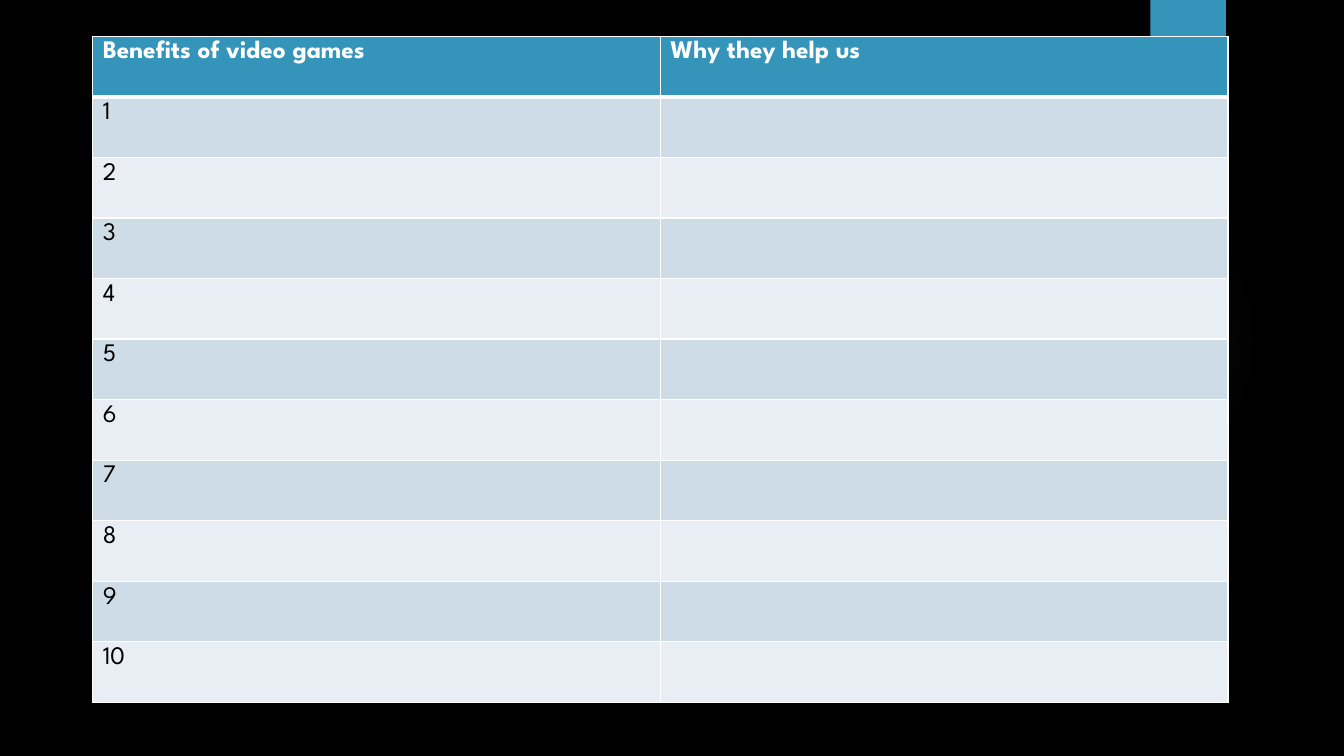
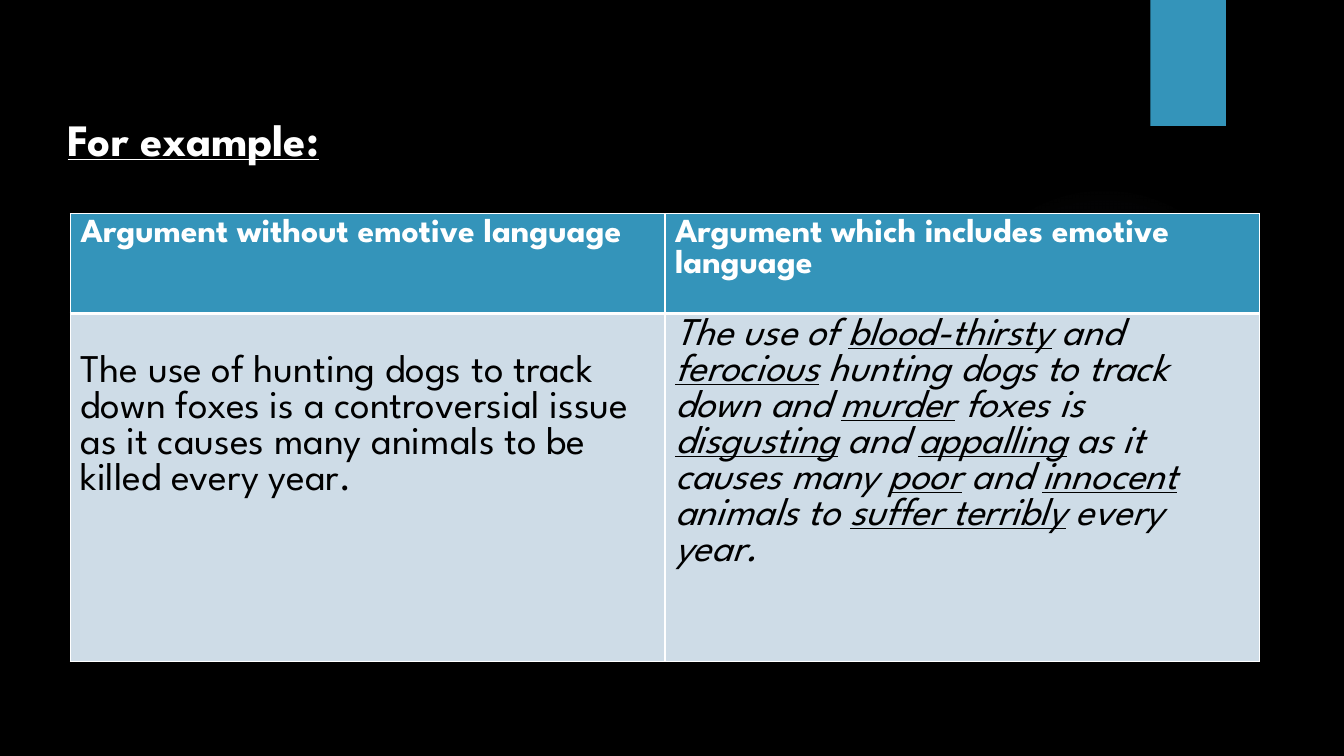
from dataclasses import dataclass

from lxml.etree import SubElement
from pptx import Presentation
from pptx.dml.color import RGBColor
from pptx.enum.shapes import MSO_SHAPE as Shape
from pptx.enum.text import MSO_ANCHOR as Anchor, MSO_AUTO_SIZE as AutoSize, PP_ALIGN as Align
from pptx.oxml import parse_xml
from pptx.oxml.ns import nsdecls, qn
from pptx.presentation import Presentation as Deck
from pptx.slide import Slide
from pptx.table import _Cell as Cell
from pptx.text.text import _Paragraph as Para
from pptx.util import Inches, Pt

BLACK = RGBColor(0x00, 0x00, 0x00)
WHITE = RGBColor(0xFF, 0xFF, 0xFF)
BLUE = RGBColor(0x34, 0x94, 0xBA)
DARK_BAND = RGBColor(0xCE, 0xDC, 0xE7)
LIGHT_BAND = RGBColor(0xE8, 0xEE, 0xF3)
GLOW = RGBColor(0xAA, 0xA7, 0xBC)
GLOW_STOPS = ((0, 7), (36, 6), (69, 0))
FONT = "League Spartan"
THIN, THICK = 1, 3
TITLE_ONLY, BLANK = 5, 6


@dataclass(frozen=True)
class Span:
    text: str
    italic: bool = False
    underline: bool = False


@dataclass(frozen=True)
class Entry:
    spans: tuple[Span, ...] = ()
    top_margin: float = 0.05


@dataclass(frozen=True)
class Grid:
    left: float
    top: float
    width: float
    row_heights: tuple[float, ...]
    header_size: float
    body_size: float
    rows: tuple[tuple[Entry, ...], ...]


def entry(text: str, top_margin: float = 0.05) -> Entry:
    return Entry((Span(text),), top_margin)


def emotive(*pieces: str) -> Entry:
    return Entry(tuple(Span(piece, True, index % 2 == 1) for index, piece in enumerate(pieces)))


BENEFITS = Grid(
    left=0.92, top=0.36, width=11.26, row_heights=(6.61 / 11,) * 11,
    header_size=18, body_size=18,
    rows=(
        (entry("Benefits of video games"), entry("Why they help us")),
        *((entry(str(number)), Entry()) for number in range(1, 11)),
    ),
)

ARGUMENTS = Grid(
    left=0.7, top=2.12, width=11.79, row_heights=(0.99, 3.45),
    header_size=24, body_size=28,
    rows=(
        (entry("Argument without emotive language"),
         entry("Argument which includes emotive language")),
        (entry("The use of hunting dogs to track down foxes is a controversial issue "
               "as it causes many animals to be killed every year.", top_margin=0.41),
         emotive("The use of ", "blood-thirsty", " and ", "ferocious",
                 " hunting dogs to track down and ", "murder", " foxes is ", "disgusting",
                 " and ", "appalling", " as it causes many ", "poor", " and ", "innocent",
                 " animals to ", "suffer terribly", " every year.")),
    ),
)


def add_text(para: Para, text: str, *, size: float, color: RGBColor, bold: bool = False,
             italic: bool = False, underline: bool = False) -> None:
    span = para.add_run()
    span.text = text
    font = span.font
    font.name, font.size = FONT, Pt(size)
    font.bold, font.italic, font.underline = bold, italic, underline
    font.color.rgb = color


def add_backdrop(page: Slide) -> None:
    glow = page.shapes.add_shape(
        Shape.OVAL, Inches(9.41), Inches(1.83), Inches(3.08), Inches(3.08))
    tab = page.shapes.add_shape(
        Shape.RECTANGLE, Inches(11.41), Inches(0), Inches(0.75), Inches(1.25))
    for shape in (glow, tab):
        shape.shadow.inherit = False
        shape.line.fill.background()
    tab.fill.solid()
    tab.fill.fore_color.rgb = BLUE

    stops = "".join(
        f'<a:gs pos="{place * 1000}"><a:srgbClr val="{GLOW}">'
        f'<a:alpha val="{alpha * 1000}"/></a:srgbClr></a:gs>'
        for place, alpha in GLOW_STOPS)
    gradient = parse_xml(
        f'<a:gradFill {nsdecls("a")} rotWithShape="1"><a:gsLst>{stops}</a:gsLst>'
        '<a:path path="circle"><a:fillToRect l="50000" t="50000" r="50000" b="50000"/>'
        '</a:path></a:gradFill>')
    glow.element.spPr.find(qn("a:prstGeom")).addnext(gradient)


def add_page(deck: Deck, layout: int) -> Slide:
    page = deck.slides.add_slide(deck.slide_layouts[layout])
    add_backdrop(page)
    return page


def set_borders(cell: Cell, *, top: float, bottom: float) -> None:
    properties = cell._tc.get_or_add_tcPr()
    for side, width in (("L", THIN), ("R", THIN), ("T", top), ("B", bottom)):
        line = SubElement(properties, qn(f"a:ln{side}"), w=str(Pt(width)))
        fill = SubElement(line, qn("a:solidFill"))
        SubElement(fill, qn("a:srgbClr"), val=str(WHITE))


def add_grid(page: Slide, grid: Grid) -> None:
    columns = len(grid.rows[0])
    table = page.shapes.add_table(
        len(grid.rows), columns, Inches(grid.left), Inches(grid.top),
        Inches(grid.width), Inches(sum(grid.row_heights))).table
    for column in table.columns:
        column.width = Inches(grid.width / columns)
    for row_index, (row, height) in enumerate(zip(grid.rows, grid.row_heights)):
        table.rows[row_index].height = Inches(height)
        header = row_index == 0
        band = BLUE if header else DARK_BAND if row_index % 2 else LIGHT_BAND
        for column_index, content in enumerate(row):
            cell = table.cell(row_index, column_index)
            set_borders(cell, top=THICK if row_index == 1 else THIN,
                        bottom=THICK if header else THIN)
            cell.fill.solid()
            cell.fill.fore_color.rgb = band
            cell.margin_top = Inches(content.top_margin)
            for span in content.spans:
                add_text(cell.text_frame.paragraphs[0], span.text,
                         size=grid.header_size if header else grid.body_size,
                         color=WHITE if header else BLACK, bold=header,
                         italic=span.italic, underline=span.underline)


def add_title(page: Slide, text: str) -> None:
    box = page.shapes.title
    box.left, box.top, box.width, box.height = (
        Inches(0.57), Inches(1.08), Inches(11.23), Inches(0.6))
    frame = box.text_frame
    frame.word_wrap = True
    frame.auto_size = AutoSize.NONE
    frame.vertical_anchor = Anchor.MIDDLE
    para = frame.paragraphs[0]
    para.alignment = Align.LEFT
    add_text(para, text, size=32, color=WHITE, bold=True, underline=True)


def main() -> None:
    deck = Presentation()
    deck.slide_width, deck.slide_height = Inches(13.33), Inches(7.5)
    background = deck.slide_master.background.fill
    background.solid()
    background.fore_color.rgb = BLACK

    add_grid(add_page(deck, BLANK), BENEFITS)

    example = add_page(deck, TITLE_ONLY)
    add_title(example, "For example:")
    add_grid(example, ARGUMENTS)

    deck.save("out.pptx")


if __name__ == "__main__":
    main()
